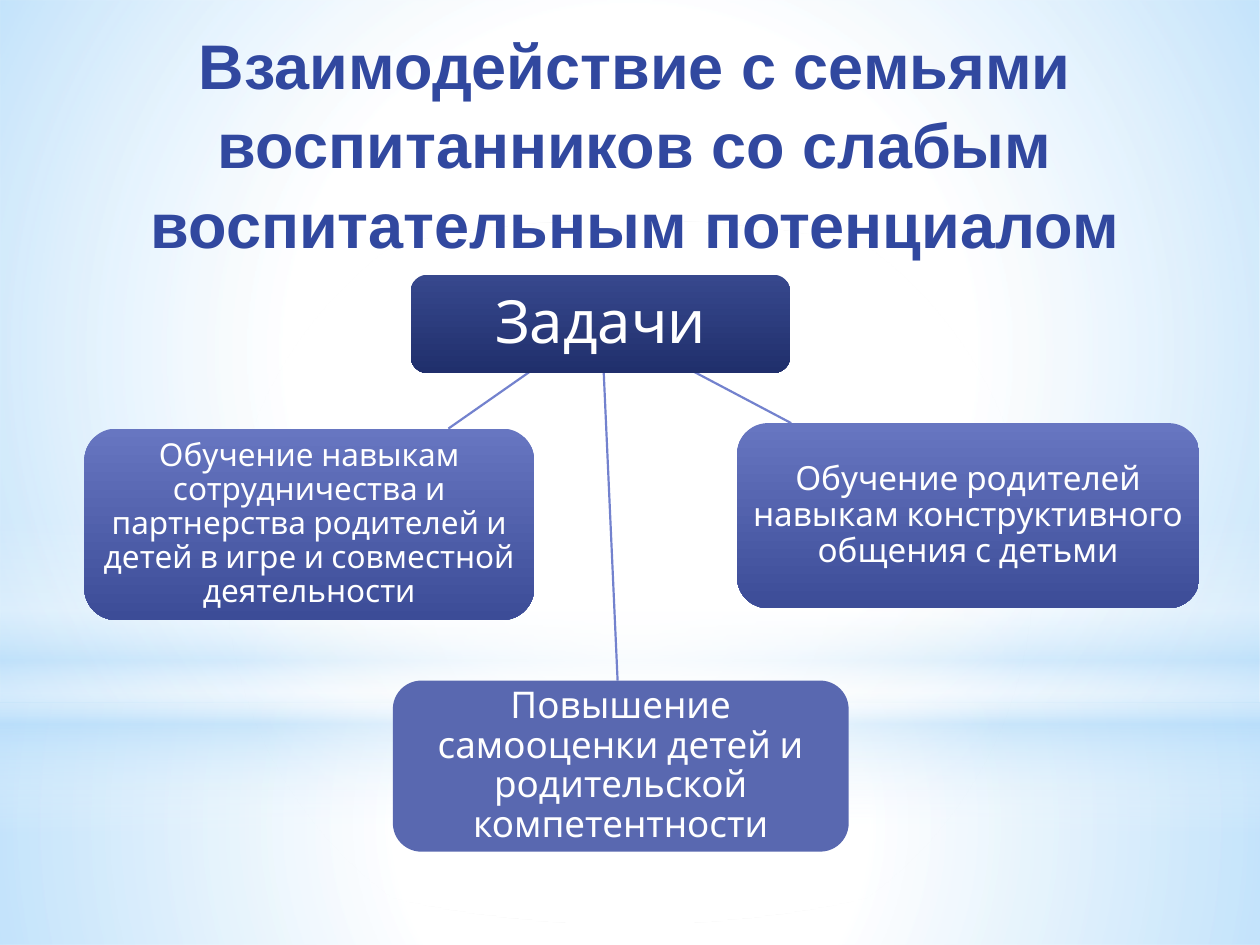
from lxml.etree import SubElement
from pptx import Presentation
from pptx.dml.color import RGBColor
from pptx.enum.shapes import MSO_CONNECTOR, MSO_SHAPE
from pptx.enum.text import MSO_ANCHOR, PP_ALIGN
from pptx.oxml.ns import qn
from pptx.oxml.xmlchemy import OxmlElement
from pptx.util import Cm, Pt

WHITE = RGBColor(0xFF, 0xFF, 0xFF)
SKY = RGBColor(0xB4, 0xDC, 0xFA)
BLUE = RGBColor(0x31, 0x48, 0x9F)
LINE = RGBColor(0x73, 0x82, 0xCE)
FLAT = RGBColor(0x59, 0x68, 0xB0)
NAVY = [(0, RGBColor(0x37, 0x48, 0x8D), 100), (100, RGBColor(0x20, 0x2F, 0x6C), 100)]
INDIGO = [(0, RGBColor(0x67, 0x76, 0xC1), 100), (100, RGBColor(0x3C, 0x4C, 0x97), 100)]

FLOOR = [(0, WHITE, 91), (37, WHITE, 76), (100, SKY, 79)]
WALL = [(0, WHITE, 89), (48, WHITE, 62), (100, SKY, 79)]
BAND = [(0, WHITE, 0), (29, WHITE, 30), (45, SKY, 40),
        (55, WHITE, 26), (65, SKY, 60), (100, WHITE, 0)]
GLOW = [(0, WHITE, 100), (56, WHITE, 0)]


def blend(shape, stops, radial):
    grad = OxmlElement("a:gradFill")
    group = SubElement(grad, qn("a:gsLst"))
    for spot, color, alpha in stops:
        stop = SubElement(group, qn("a:gs"), pos=str(spot * 1000))
        tint = SubElement(stop, qn("a:srgbClr"), val=str(color))
        SubElement(tint, qn("a:alpha"), val=str(alpha * 1000))
    if radial:
        focus = SubElement(grad, qn("a:path"), path="circle")
        SubElement(focus, qn("a:fillToRect"), l="50000", t="50000", r="50000", b="50000")
    else:
        SubElement(grad, qn("a:lin"), ang="5400000", scaled="0")
    shape._element.spPr.insert(2, grad)


def add_form(slide, kind, area, fill, radial=False):
    shape = slide.shapes.add_shape(kind, *map(Cm, area))
    if isinstance(fill, RGBColor):
        shape.fill.solid()
        shape.fill.fore_color.rgb = fill
    else:
        blend(shape, fill, radial)
    shape.line.fill.background()
    shape.shadow.inherit = False
    return shape


def add_text(shape, text, size, font="Karla", color=WHITE, bold=False,
             pad=None, space=0.9, anchor=MSO_ANCHOR.MIDDLE):
    frame = shape.text_frame
    frame.word_wrap = True
    frame.vertical_anchor = anchor
    if pad is not None:
        frame.margin_left = frame.margin_right = Cm(pad)
        frame.margin_top = frame.margin_bottom = Cm(pad)
    para = frame.paragraphs[0]
    para.alignment = PP_ALIGN.CENTER
    para.line_spacing = space
    run = para.add_run()
    run.text = text
    run.font.name = font
    run.font.size = Pt(size)
    run.font.bold = bold
    run.font.color.rgb = color


def add_title(slide, text):
    box = slide.shapes.add_textbox(Cm(1.7), Cm(0.33), Cm(22.2), Cm(4.88))
    add_text(box, text, 36, font="Arial", color=BLUE, bold=True,
             space=1.05, anchor=MSO_ANCHOR.TOP)


def add_link(slide, *ends):
    link = slide.shapes.add_connector(MSO_CONNECTOR.STRAIGHT, *map(Cm, ends))
    link.line.color.rgb = LINE
    link.line.width = Pt(1.25)
    link._element.spPr.append(OxmlElement("a:effectLst"))


def add_node(slide, area, fill, text, size, pad):
    node = add_form(slide, MSO_SHAPE.ROUNDED_RECTANGLE, area, fill)
    add_text(node, text, size, pad=pad)


def add_scene(slide):
    add_form(slide, MSO_SHAPE.RECTANGLE, (0, 14.17, 25.4, 4.88), FLOOR, True)
    add_form(slide, MSO_SHAPE.RECTANGLE, (0, 0, 25.4, 14.17), WALL, True)
    add_form(slide, MSO_SHAPE.RECTANGLE, (0, 10.46, 25.4, 6.35), BAND)
    add_form(slide, MSO_SHAPE.OVAL, (0, 4.45, 25.4, 14.17), GLOW, True)


def main():
    deck = Presentation()
    deck.slide_width, deck.slide_height = Cm(25.4), Cm(19.05)
    slide = deck.slides.add_slide(deck.slide_layouts[6])
    slide.background.fill.solid()
    slide.background.fill.fore_color.rgb = WHITE
    add_scene(slide)
    add_title(slide, "Взаимодействие с семьями воспитанников со слабым "
                     "воспитательным потенциалом")

    base = 7.5
    for start, end, top in ((14, 15.95, 8.53), (12.17, 12.45, 13.72), (10.67, 9.04, 8.64)):
        add_link(slide, start, base, end, top)

    nodes = (
        ((8.28, 5.54, 7.65, 1.98), NAVY, "Задачи", 34, 0.23),
        ((14.86, 8.53, 9.32, 3.73), INDIGO,
         "Обучение родителей навыкам конструктивного общения с детьми", 19, 0.13),
        ((7.92, 13.72, 9.19, 3.45), FLAT,
         "Повышение самооценки детей и родительской компетентности", 21, 0.15),
        ((1.7, 8.64, 9.07, 3.86), INDIGO,
         "Обучение навыкам сотрудничества и партнерства родителей и детей "
         "в игре и совместной деятельности", 18, 0.13),
    )
    for node in nodes:
        add_node(slide, *node)
    deck.save("out.pptx")


if __name__ == "__main__":
    main()
